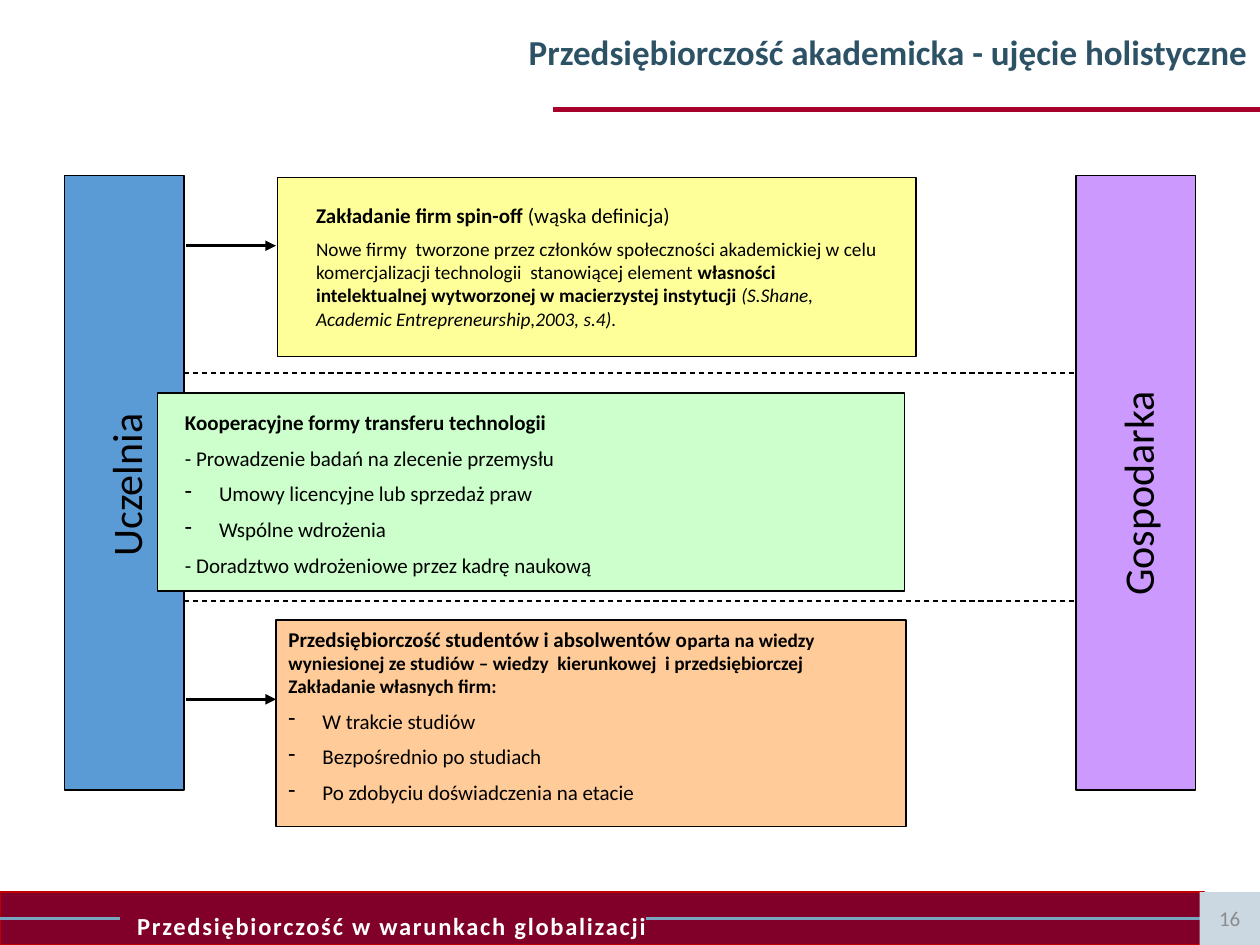
from pptx import Presentation
from pptx.dml.color import RGBColor
from pptx.enum.dml import MSO_LINE
from pptx.enum.shapes import MSO_CONNECTOR, MSO_SHAPE
from pptx.enum.text import MSO_ANCHOR, MSO_AUTO_SIZE, PP_ALIGN
from pptx.oxml.ns import qn
from pptx.util import Inches, Pt
from lxml import etree

RECT, STRAIGHT, DASH = MSO_SHAPE.RECTANGLE, MSO_CONNECTOR.STRAIGHT, MSO_LINE.DASH
MIDDLE, RIGHT, CENTER = MSO_ANCHOR.MIDDLE, PP_ALIGN.RIGHT, PP_ALIGN.CENTER
NO_FIT = MSO_AUTO_SIZE.NONE
FONT = "Calibri"
HANG = Inches(0.27)
COLORS = {
    "title": "2D5265", "rule": "A7002B", "footer": "810029", "footer_edge": "C00000",
    "footer_line": "7AA6C2", "white": "FFFFFF", "black": "000000",
    "blue": "5B9BD5", "violet": "CC99FF", "yellow": "FFFF99",
    "green": "CCFFCC", "orange": "FFCC99", "number_bg": "CBD8E1", "number": "8C8C8C",
}


def rgb(name):
    return RGBColor.from_string(COLORS[name])


def add_box(slide, box, fill, edge="black"):
    sp = slide.shapes.add_shape(RECT, *map(Inches, box))
    sp.shadow.inherit = False
    sp.fill.solid()
    sp.fill.fore_color.rgb = rgb(fill)
    if edge:
        sp.line.color.rgb = rgb(edge)
        sp.line.width = Pt(0.75)
    else:
        sp.line.fill.background()
    return sp


def add_line(slide, x1, x2, y, color, width, dash=None, arrow=False):
    ln = slide.shapes.add_connector(STRAIGHT, Inches(x1), Inches(y), Inches(x2), Inches(y))
    ln.line.color.rgb = rgb(color)
    ln.line.width = Pt(width)
    if dash:
        ln.line.dash_style = dash
    if arrow:
        etree.SubElement(ln.line._get_or_add_ln(), qn("a:tailEnd"), type="triangle")
    etree.SubElement(ln._element.spPr, qn("a:effectLst"))


def add_run(p, text, size, color="black", bold=False, italic=False):
    """Add text to a paragraph, turning newlines into line breaks."""
    for i, part in enumerate(text.split("\n")):
        if i:
            p.add_line_break()
        r = p.add_run()
        r.text = part
        f = r.font
        f.name, f.size, f.bold, f.italic = FONT, Pt(size), bold, italic
        f.color.rgb = rgb(color)
    return r


def add_text(slide, box, paragraphs):
    """Each paragraph is (dash bullet or not, runs); a run is add_run arguments."""
    sp = slide.shapes.add_textbox(*map(Inches, box))
    tf = sp.text_frame
    tf.word_wrap = True
    for i, (bullet, runs) in enumerate(paragraphs):
        p = tf.add_paragraph() if i else tf.paragraphs[0]
        if bullet:
            pPr = p._p.get_or_add_pPr()
            pPr.set("marL", str(HANG))
            pPr.set("indent", str(-HANG))
            etree.SubElement(pPr, qn("a:buChar"), char="-")
        if i:
            p.space_before = Pt(runs[0][1] / 2)
        for run in runs:
            add_run(p, *run)
    return sp


def add_title(slide, box, text):
    sp = slide.shapes.title
    sp.left, sp.top, sp.width, sp.height = map(Inches, box)
    tf = sp.text_frame
    tf.auto_size, tf.vertical_anchor = NO_FIT, MIDDLE
    p = tf.paragraphs[0]
    p.alignment, p.line_spacing = RIGHT, 0.9
    add_run(p, text, 20, "title", True)
    add_line(slide, 4.39, 10, 0.87, "rule", 3)


def add_pillar(slide, box, fill, label, label_box):
    add_box(slide, box, fill)
    add_text(slide, label_box, [(False, [(label, 24)])]).rotation = 270


def add_panel(slide, box, fill, text_box, paragraphs, arrow_y=None):
    if arrow_y:
        add_line(slide, 1.48, 2.19, arrow_y, "black", 2, arrow=True)
    add_box(slide, box, fill)
    add_text(slide, text_box, paragraphs)


def add_footer(slide, box, text, number):
    left, top, width, height = box
    bar_w = 9.56
    bar = add_box(slide, (left, top, bar_w, height), "footer", "footer_edge")
    tf = bar.text_frame
    tf.word_wrap, tf.vertical_anchor = True, MIDDLE
    p = tf.paragraphs[0]
    p.alignment, p.line_spacing = PP_ALIGN.LEFT, 1.5
    pPr = p._p.get_or_add_pPr()
    pPr.set("marL", str(Inches(1.28)))
    pPr.set("indent", str(Inches(-0.29)))
    r = add_run(p, text, 14, "white", True)
    r.font._element.set("spc", "100")
    for x1, x2 in ((5.13, 9.55), (0, 0.95)):
        add_line(slide, left + x1, left + x2, top + height / 2, "footer_line", 1.75)

    # Page number
    num_w = 0.48
    sp = add_box(slide, (left + width - num_w, top, num_w, height), "number_bg", None)
    tf = sp.text_frame
    tf.vertical_anchor = MIDDLE
    tf.word_wrap = False
    tf.paragraphs[0].alignment = CENTER
    add_run(tf.paragraphs[0], number, 12, "number")


def main():
    prs = Presentation()
    prs.slide_width, prs.slide_height = Inches(10), Inches(7.5)
    slide = prs.slides.add_slide(prs.slide_layouts[5])

    add_title(slide, (0, 0, 10, 0.86), "Przedsiębiorczość akademicka - ujęcie holistyczne")

    # Pillars and the dashed dividers between them
    add_pillar(slide, (0.51, 1.39, 0.95, 4.88), "blue", "Uczelnia", (0.22, 3.49, 1.55, 0.5))
    for y in (2.96, 4.77):
        add_line(slide, 1.46, 8.54, y, "black", 0.75, DASH)
    add_pillar(slide, (8.54, 1.39, 0.95, 4.88), "violet", "Gospodarka",
               (7.86, 3.41, 2.33, 0.5))

    # Students and graduates
    add_panel(slide, (2.19, 4.92, 5, 1.64), "orange", (2.19, 4.92, 5.68, 1.77), [
        (False, [("Przedsiębiorczość studentów i absolwentów o", 12, "black", True),
                 ("parta na wiedzy \nwyniesionej ze studiów – wiedzy  kierunkowej  "
                  "i przedsiębiorczej\nZakładanie własnych firm:", 11, "black", True)]),
        (True, [("W trakcie studiów", 12)]),
        (True, [("Bezpośrednio po studiach", 12)]),
        (True, [("Po zdobyciu doświadczenia na etacie", 12)]),
    ], arrow_y=5.55)

    # Technology transfer
    add_panel(slide, (1.25, 3.12, 5.93, 1.57), "green", (1.37, 3.2, 5.93, 1.5), [
        (False, [("Kooperacyjne formy transferu technologii", 12, "black", True)]),
        (False, [("- Prowadzenie badań na zlecenie przemysłu", 12)]),
        (True, [("Umowy licencyjne lub sprzedaż praw", 12)]),
        (True, [("Wspólne wdrożenia", 12)]),
        (False, [("- Doradztwo wdrożeniowe przez kadrę naukową", 12)]),
    ])

    # Spin-off companies
    add_panel(slide, (2.2, 1.41, 5.07, 1.42), "yellow", (2.41, 1.56, 4.75, 1.44), [
        (False, [("Zakładanie firm spin-off ", 12, "black", True), ("(wąska definicja)", 12)]),
        (False, [("Nowe firmy  tworzone przez członków społeczności akademickiej w celu "
                  "komercjalizacji technologii  stanowiącej element ", 11),
                 ("własności intelektualnej wytworzonej w macierzystej instytucji ",
                  11, "black", True),
                 ("(S.Shane, Academic Entrepreneurship,2003, s.4).",
                  11, "black", False, True)]),
    ], arrow_y=1.95)

    add_footer(slide, (0, 7.08, 10, 0.42), "Przedsiębiorczość w warunkach globalizacji", "16")
    prs.save("out.pptx")


if __name__ == "__main__":
    main()
